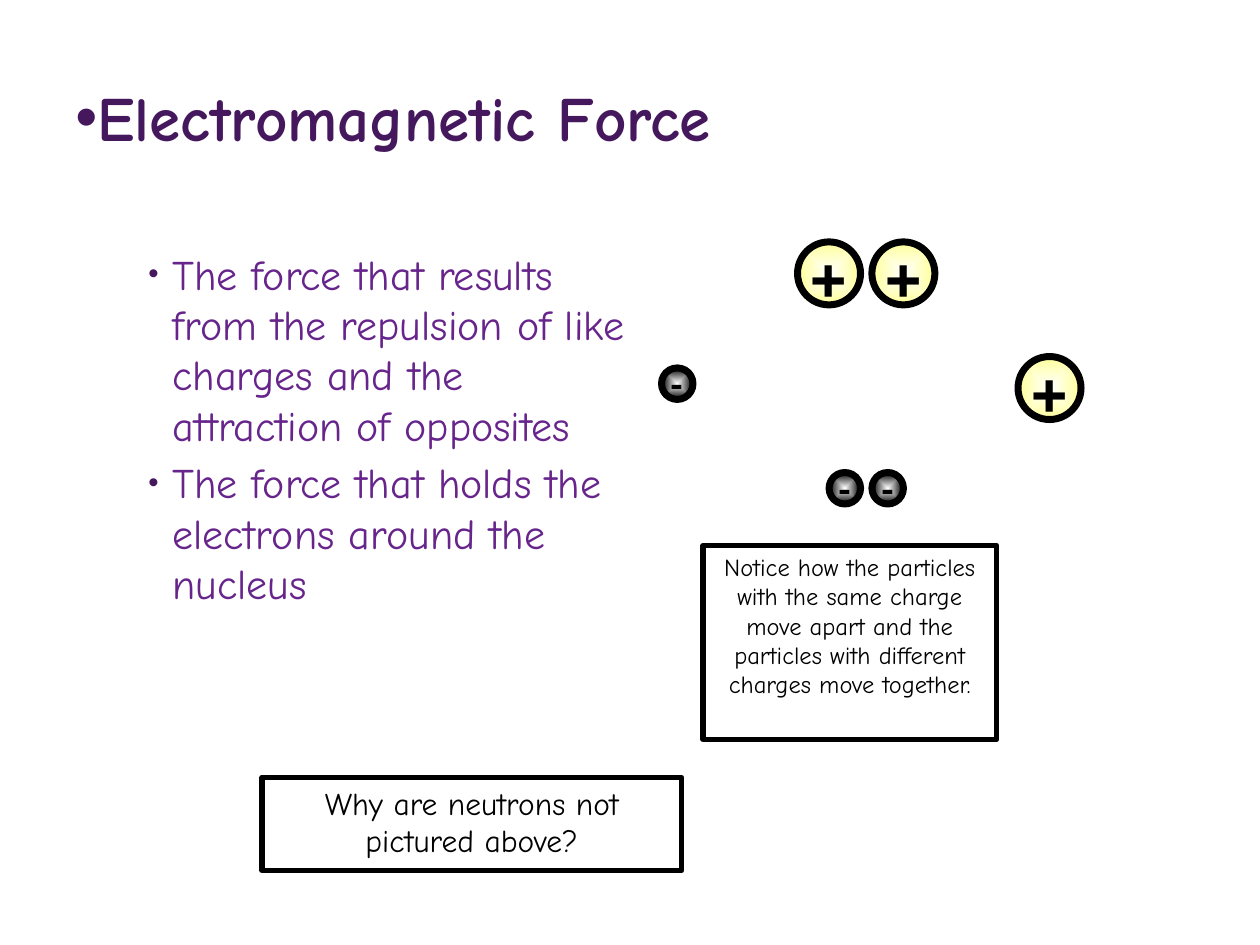
from lxml.etree import SubElement
from pptx import Presentation
from pptx.dml.color import RGBColor
from pptx.enum.shapes import MSO_SHAPE
from pptx.enum.text import MSO_ANCHOR, PP_ALIGN
from pptx.oxml.ns import qn
from pptx.util import Inches, Pt

TEXT_FONT = "Comic Neue"
SIGN_FONT = "TeX Gyre Adventor"
DARK_PURPLE = "45185E"
PURPLE = "67258C"
BLACK = "000000"
WHITE = "FFFFFF"
YELLOW = "FFFF99"


def color(hex_string):
    return RGBColor.from_string(hex_string)


def add_text(paragraph, text, font_name, size, hex_string, bold=False, bullet_percent=None):
    """Add one run, with a dark purple bullet of the given relative size if wanted."""
    if bullet_percent:
        properties = paragraph._p.get_or_add_pPr()
        bullet_color = SubElement(properties, qn("a:buClr"))
        SubElement(bullet_color, qn("a:srgbClr"), val=DARK_PURPLE)
        SubElement(properties, qn("a:buSzPct"), val=str(bullet_percent * 1000))
        SubElement(properties, qn("a:buFont"), typeface="Arial")
        SubElement(properties, qn("a:buChar"), char="•")
    run = paragraph.add_run()
    run.text = text
    run.font.name = font_name
    run.font.size = Pt(size)
    run.font.bold = bold
    run.font.color.rgb = color(hex_string)


presentation = Presentation()
presentation.slide_width = Inches(10)
presentation.slide_height = Inches(7.5)
slide = presentation.slides.add_slide(presentation.slide_layouts[6])

# Title
title = slide.shapes.add_textbox(Inches(0.5), Inches(0.3), Inches(9), Inches(1.25))
title.text_frame.word_wrap = True
title.text_frame.vertical_anchor = MSO_ANCHOR.MIDDLE
add_text(title.text_frame.paragraphs[0], "Electromagnetic Force", TEXT_FONT, 36,
         DARK_PURPLE, bold=True, bullet_percent=100)

# Bulleted explanation
body = slide.shapes.add_textbox(Inches(1.08), Inches(1.92), Inches(4), Inches(4.33))
body.text_frame.word_wrap = True
points = [
    "The force that results from the repulsion of like charges and the attraction of opposites",
    "The force that holds the electrons around the nucleus",
]
for index, point in enumerate(points):
    if index == 0:
        paragraph = body.text_frame.paragraphs[0]
    else:
        paragraph = body.text_frame.add_paragraph()
        paragraph.space_before = Pt(4)
    properties = paragraph._p.get_or_add_pPr()
    properties.set("marL", str(Inches(0.19)))
    properties.set("indent", str(-Inches(0.19)))
    add_text(paragraph, point, TEXT_FONT, 24, PURPLE, bullet_percent=70)

# Charged particles: sign -> diameter, edge colour, text size
particle_styles = {"+": (0.5, YELLOW, 32), "-": (0.25, BLACK, 20)}
particles = [
    ("-", 5.25, 2.92),
    ("+", 6.92, 1.92),
    ("+", 8.08, 2.83),
    ("+", 6.33, 1.92),
    ("-", 6.92, 3.75),
    ("-", 6.58, 3.75),
]
for sign, left, top in particles:
    diameter, edge_color, size = particle_styles[sign]
    particle = slide.shapes.add_shape(MSO_SHAPE.OVAL, Inches(left), Inches(top),
                                      Inches(diameter), Inches(diameter))
    particle.shadow.inherit = False
    particle.line.color.rgb = color(BLACK)
    particle.line.width = Pt(4)

    particle.fill.gradient()
    for stop, position, stop_color in zip(particle.fill.gradient_stops, (0, 1), (WHITE, edge_color)):
        stop.position = position
        stop.color.rgb = color(stop_color)
    gradient = particle._element.spPr.find(qn("a:gradFill"))
    gradient.remove(gradient.find(qn("a:lin")))
    radial = SubElement(gradient, qn("a:path"), path="shape")
    SubElement(radial, qn("a:fillToRect"), l="50000", t="50000", r="50000", b="50000")

    particle.text_frame.word_wrap = False
    particle.text_frame.vertical_anchor = MSO_ANCHOR.MIDDLE
    paragraph = particle.text_frame.paragraphs[0]
    paragraph.alignment = PP_ALIGN.CENTER
    add_text(paragraph, sign, SIGN_FONT, size, BLACK, bold=True)

# Framed notes
notes = [
    ("Notice how the particles with the same charge move apart and the particles "
     "with different charges move together.", 14, 5.58, 4.33, 2.33, 1.54),
    ("Why are neutrons not pictured above?", 18, 2.08, 6.17, 3.33, 0.74),
]
for text, size, left, top, width, height in notes:
    note = slide.shapes.add_shape(MSO_SHAPE.RECTANGLE, Inches(left), Inches(top),
                                  Inches(width), Inches(height))
    note.shadow.inherit = False
    note.fill.solid()
    note.fill.fore_color.rgb = color(WHITE)
    note.line.color.rgb = color(BLACK)
    note.line.width = Pt(3)
    note.text_frame.word_wrap = True
    note.text_frame.vertical_anchor = MSO_ANCHOR.TOP
    paragraph = note.text_frame.paragraphs[0]
    paragraph.alignment = PP_ALIGN.CENTER
    add_text(paragraph, text, TEXT_FONT, size, BLACK)

presentation.save("out.pptx")
